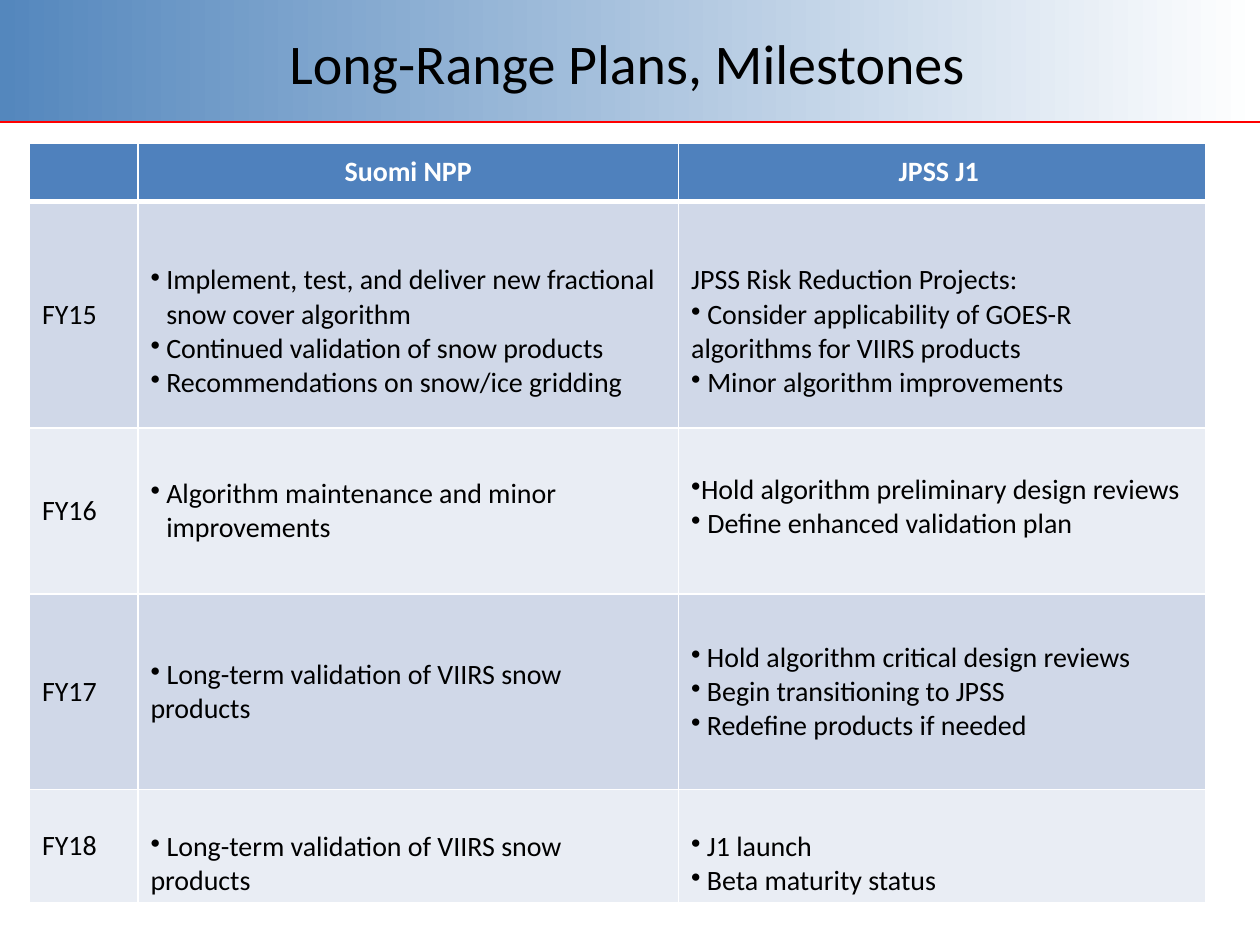
"""Build the long-range plans slide with its milestone table by fiscal year."""
import pptx
import pptx.dml.color
import pptx.enum.shapes
import pptx.enum.text
import pptx.oxml
import pptx.oxml.ns
import pptx.util

Pt = pptx.util.Pt
RGBColor = pptx.dml.color.RGBColor
ALIGN = pptx.enum.text.PP_ALIGN
MIDDLE = pptx.enum.text.MSO_ANCHOR.MIDDLE

BLACK = RGBColor(0x00, 0x00, 0x00)
WHITE = RGBColor(0xFF, 0xFF, 0xFF)
RED = RGBColor(0xFF, 0x00, 0x00)
BANNER_BLUE = RGBColor(0x54, 0x87, 0xBD)
HEADER_BLUE = RGBColor(0x4F, 0x81, 0xBD)
BAND_DARK = RGBColor(0xD0, 0xD8, 0xE8)
BAND_LIGHT = RGBColor(0xE9, 0xED, 0xF4)
FONT = "Calibri"
NS = pptx.oxml.ns.nsdecls("a")

PLAIN, INLINE, HANGING = "plain", "inline", "hanging"
LINE = 19.5
HEADINGS = ["", "Suomi NPP", "JPSS J1 "]
PLANS = [
    ("FY15",
     [(HANGING, "Implement, test, and deliver new fractional snow cover algorithm"),
      (HANGING, "Continued validation of snow products"),
      (HANGING, "Recommendations on snow/ice gridding")],
     [(PLAIN, "JPSS Risk Reduction Projects:"),
      (INLINE, " Consider applicability of GOES-R algorithms for VIIRS products"),
      (INLINE, " Minor algorithm improvements")]),
    ("FY16",
     [(HANGING, "Algorithm maintenance and minor improvements")],
     [(INLINE, "Hold algorithm preliminary design reviews"),
      (INLINE, " Define enhanced validation plan")]),
    ("FY17",
     [(INLINE, " Long-term validation of VIIRS snow products")],
     [(HANGING, "Hold algorithm critical design reviews"),
      (HANGING, "Begin transitioning to JPSS"),
      (HANGING, "Redefine products if needed")]),
    ("FY18",
     [(INLINE, " Long-term validation of VIIRS snow products")],
     [(HANGING, "J1 launch"),
      (HANGING, "Beta maturity status")]),
]
EXTRA_TOP = {(1, 1): LINE, (1, 2): LINE, (4, 1): LINE, (4, 2): LINE}
EXTRA_BOTTOM = {(2, 2): 4.5}


def write(paragraph, text, size, color, bold=False, align=ALIGN.LEFT, style=PLAIN):
    paragraph.alignment = align
    if style != PLAIN:
        properties = paragraph._p.get_or_add_pPr()
        indent = Pt(9) if style == HANGING else 0
        properties.set("marL", str(indent))
        properties.set("indent", str(-indent))
        for bullet in (f'<a:buClr {NS}><a:srgbClr val="{BLACK}"/></a:buClr>',
                       f'<a:buChar {NS} char="•"/>'):
            properties.append(pptx.oxml.parse_xml(bullet))
    run = paragraph.add_run()
    run.text = text
    run.font.name = FONT
    run.font.size = Pt(size)
    run.font.bold = bold
    run.font.color.rgb = color


def dress(cell, color, top, bottom):
    properties = cell._tc.get_or_add_tcPr()
    for side, width in (("L", 1), ("R", 1), ("T", top), ("B", bottom)):
        properties.append(pptx.oxml.parse_xml(
            f'<a:ln{side} {NS} w="{Pt(width)}"><a:solidFill>'
            f'<a:srgbClr val="{WHITE}"/></a:solidFill></a:ln{side}>'))
    cell.fill.solid()
    cell.fill.fore_color.rgb = color
    cell.vertical_anchor = MIDDLE
    cell.margin_left = cell.margin_right = Pt(7.2)
    cell.margin_top = cell.margin_bottom = Pt(3.6)


presentation = pptx.Presentation()
presentation.slide_width = Pt(720)
presentation.slide_height = Pt(540)
slide = presentation.slides.add_slide(presentation.slide_layouts[6])

banner = slide.shapes.add_shape(
    pptx.enum.shapes.MSO_SHAPE.RECTANGLE, Pt(0), Pt(-0.5), Pt(720), Pt(70))
banner.shadow.inherit = False
banner.line.fill.background()
banner.fill.gradient()
banner.fill.gradient_angle = 0
for stop, color in zip(banner.fill.gradient_stops, (BANNER_BLUE, WHITE)):
    stop.color.rgb = color

rule = slide.shapes.add_connector(
    pptx.enum.shapes.MSO_CONNECTOR.STRAIGHT, Pt(0), Pt(69.75), Pt(720), Pt(69.75))
rule.line.color.rgb = RED
rule.line.width = Pt(1.25)
rule._element.spPr.append(pptx.oxml.parse_xml(f"<a:effectLst {NS}/>"))

title = slide.shapes.add_textbox(Pt(34.5), Pt(3), Pt(648), Pt(65))
title.text_frame.word_wrap = True
title.text_frame.vertical_anchor = MIDDLE
write(title.text_frame.paragraphs[0], "Long-Range Plans, Milestones", 32, BLACK,
      align=ALIGN.CENTER)

milestones = slide.shapes.add_table(
    5, 3, Pt(16.8), Pt(81.6), Pt(672), Pt(435)).table
for column, width in zip(milestones.columns, (62, 309, 301)):
    column.width = Pt(width)
for row, height in zip(milestones.rows, (33.5, 129.5, 95, 111.5, 52)):
    row.height = Pt(height)

for column, heading in enumerate(HEADINGS):
    cell = milestones.cell(0, column)
    dress(cell, HEADER_BLUE, 1, 3)
    if heading:
        write(cell.text_frame.paragraphs[0], heading, 16, WHITE, True, ALIGN.CENTER)

for row, (year, suomi_plans, jpss_plans) in enumerate(PLANS, start=1):
    for column, items in enumerate(([(PLAIN, year)], suomi_plans, jpss_plans)):
        cell = milestones.cell(row, column)
        dress(cell, BAND_DARK if row % 2 else BAND_LIGHT, 3 if row == 1 else 1, 1)
        cell.margin_top = Pt(3.6 + EXTRA_TOP.get((row, column), 0))
        cell.margin_bottom = Pt(3.6 + EXTRA_BOTTOM.get((row, column), 0))
        for index, (style, text) in enumerate(items):
            frame = cell.text_frame
            paragraph = frame.add_paragraph() if index else frame.paragraphs[0]
            write(paragraph, text, 16, BLACK, style=style)

presentation.save("out.pptx")
